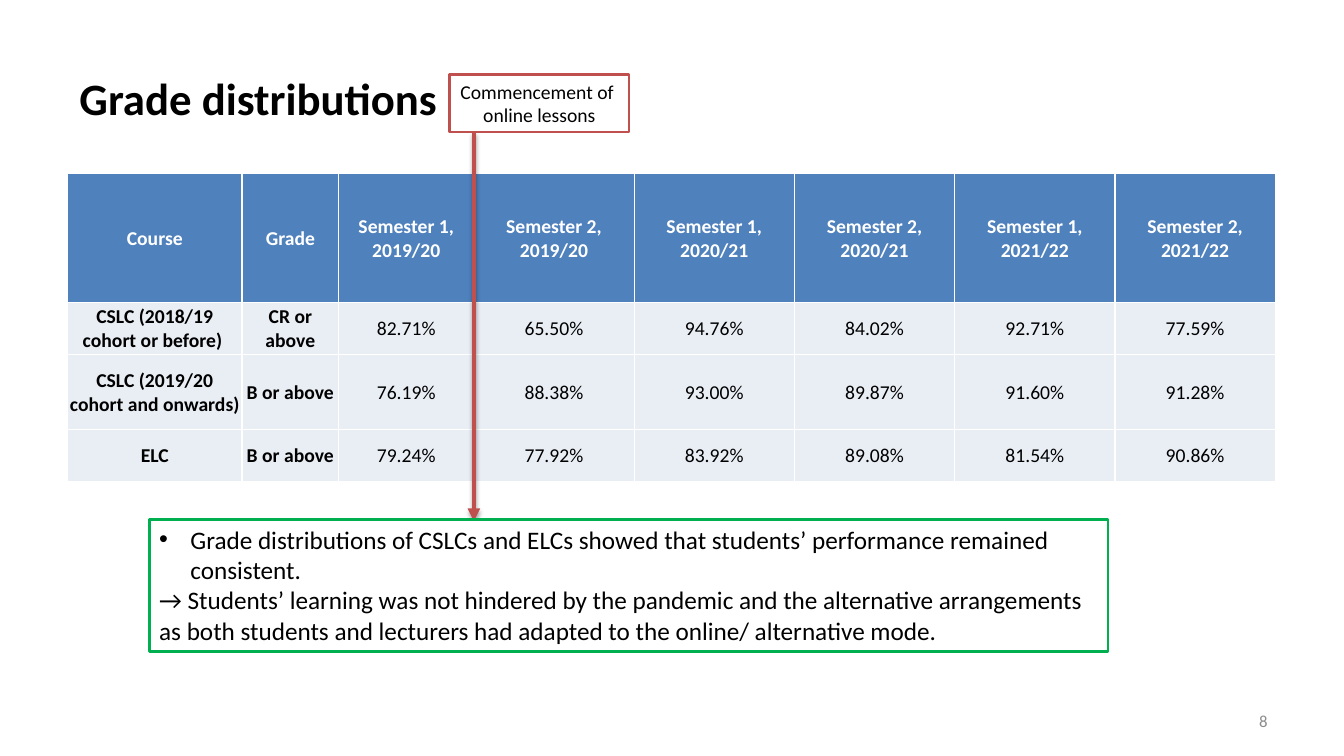
from lxml import etree
from pptx import Presentation
from pptx.dml.color import RGBColor
from pptx.enum.shapes import MSO_CONNECTOR, MSO_SHAPE
from pptx.enum.text import MSO_ANCHOR, MSO_AUTO_SIZE, PP_ALIGN
from pptx.oxml.ns import qn
from pptx.util import Inches, Pt

TOP, MIDDLE = MSO_ANCHOR.TOP, MSO_ANCHOR.MIDDLE
LEFT, CENTER, RIGHT = PP_ALIGN.LEFT, PP_ALIGN.CENTER, PP_ALIGN.RIGHT
GROW, RECTANGLE, STRAIGHT = MSO_AUTO_SIZE.SHAPE_TO_FIT_TEXT, MSO_SHAPE.RECTANGLE, MSO_CONNECTOR.STRAIGHT

COLORS = {
    "text": "000000",
    "white": "FFFFFF",
    "page": "8C8C8C",
    "header": "4F81BD",
    "band": "E9EDF4",
    "event": "C0504D",
    "finding": "00B050",
}
COLUMN_WIDTHS = [1.73, 0.96, 1.34] + [1.59] * 5
ROW_HEIGHTS = [1.28, 0.52, 0.74, 0.52]
SEMESTERS = [f"Semester {term}, {year}" for year in ("2019/20", "2020/21", "2021/22") for term in (1, 2)]
GRADES = [
    ["Course", "Grade", *SEMESTERS],
    ["CSLC (2018/19 cohort or before) ", "CR or above",
     "82.71%", "65.50%", "94.76%", "84.02%", "92.71%", "77.59%"],
    ["CSLC (2019/20 cohort and onwards) ", "B or above",
     "76.19%", "88.38%", "93.00%", "89.87%", "91.60%", "91.28%"],
    ["ELC", "B or above",
     "79.24%", "77.92%", "83.92%", "89.08%", "81.54%", "90.86%"],
]
FINDINGS = [
    "Grade distributions of CSLCs and ELCs showed that students’ performance remained consistent.",
    "→ Students’ learning was not hindered by the pandemic and the alternative arrangements "
    "as both students and lecturers had adapted to the online/ alternative mode.",
]


def rgb(name):
    """Return the named colour."""
    return RGBColor.from_string(COLORS[name])


def apply_format(target, values):
    """Set each attribute of the target from a dict of values."""
    for attribute, value in values.items():
        setattr(target, attribute, value)


def add_xml(parent, tag, **attributes):
    """Append a DrawingML element with the given attributes."""
    return etree.SubElement(parent, qn(f"a:{tag}"), {key: str(value) for key, value in attributes.items()})


def write(frame, lines, size, color="text", bold=False, align=LEFT):
    """Fill a text frame with one paragraph per line."""
    for index, line in enumerate(lines):
        paragraph = frame.paragraphs[0] if index == 0 else frame.add_paragraph()
        paragraph.alignment = align
        run = paragraph.add_run()
        run.text = line
        apply_format(run.font, {"name": "Calibri", "size": Pt(size), "bold": bold})
        run.font.color.rgb = rgb(color)


def add_label(slide, box, text, **style):
    """Place a line of vertically centred text in the box."""
    frame = slide.shapes.add_textbox(*map(Inches, box)).text_frame
    apply_format(frame, {"word_wrap": True, "vertical_anchor": MIDDLE})
    write(frame, [text], **style)


def add_callout(slide, box, lines, outline, wrap, **style):
    """Place an outlined white box of text and return its text frame."""
    callout = slide.shapes.add_shape(RECTANGLE, *map(Inches, box))
    callout.shadow.inherit = False
    callout.fill.solid()
    callout.fill.fore_color.rgb = rgb("white")
    callout.line.color.rgb = rgb(outline)
    callout.line.width = Pt(2)
    frame = callout.text_frame
    apply_format(frame, {"word_wrap": wrap, "auto_size": GROW, "vertical_anchor": TOP})
    write(frame, lines, **style)
    return frame


def add_findings(slide, box):
    """Place the findings with a bullet on the first one."""
    frame = add_callout(slide, box, FINDINGS, "finding", True, size=18)
    properties = frame.paragraphs[0]._p.get_or_add_pPr()
    indent = Inches(0.31)
    properties.set("marL", str(indent))
    properties.set("indent", str(-indent))
    add_xml(properties, "buFont", typeface="Arial")
    add_xml(properties, "buChar", char="•")


def add_borders(cell):
    """Draw thin white lines on all sides of a cell."""
    properties = cell._tc.get_or_add_tcPr()
    for side in ("lnL", "lnR", "lnT", "lnB"):
        border = add_xml(properties, side, w=Pt(1))
        add_xml(add_xml(border, "solidFill"), "srgbClr", val=COLORS["white"])


def add_grades(slide, left, top):
    """Place the table of grades by course and semester."""
    size = (sum(COLUMN_WIDTHS), sum(ROW_HEIGHTS))
    table = slide.shapes.add_table(len(ROW_HEIGHTS), len(COLUMN_WIDTHS),
                                   *map(Inches, (left, top, *size))).table
    for column, width in zip(table.columns, COLUMN_WIDTHS):
        column.width = Inches(width)
    for row_index, (row, height) in enumerate(zip(table.rows, ROW_HEIGHTS)):
        row.height = Inches(height)
        is_header = row_index == 0
        for column_index, cell in enumerate(row.cells):
            inset = Inches(0.01)
            apply_format(cell, {"margin_left": inset, "margin_right": inset, "margin_top": inset,
                                "margin_bottom": 0, "vertical_anchor": MIDDLE})
            add_borders(cell)
            cell.fill.solid()
            cell.fill.fore_color.rgb = rgb("header" if is_header else "band")
            write(cell.text_frame, [GRADES[row_index][column_index]], 14,
                  "white" if is_header else "text", is_header or column_index < 2, CENTER)


def add_event_arrow(slide, x, top, bottom):
    """Draw the downward arrow that marks the start of online lessons."""
    arrow = slide.shapes.add_connector(STRAIGHT, *map(Inches, (x, top, x, bottom)))
    arrow.line.color.rgb = rgb("event")
    arrow.line.width = Pt(3)
    add_xml(arrow.line._get_or_add_ln(), "tailEnd", type="triangle")
    effects = add_xml(arrow._element.spPr, "effectLst")
    shadow = add_xml(effects, "outerShdw", blurRad=Pt(3.1), dist=Pt(1.8), dir=90 * 60000, rotWithShape=0)
    add_xml(add_xml(shadow, "srgbClr", val=COLORS["text"]), "alpha", val=35000)


def build_slide(presentation):
    """Add the grade distributions slide."""
    slide = presentation.slides.add_slide(presentation.slide_layouts[6])
    add_label(slide, (0.69, 0.34, 12, 1.25), "Grade distributions", size=32, bold=True)
    add_label(slide, (9.56, 6.95, 3.11, 0.4), "8", size=12, color="page", align=RIGHT)
    add_grades(slide, 0.67, 1.72)
    add_event_arrow(slide, 4.7, 1.31, 5.17)
    add_callout(slide, (4.46, 0.74, 1.78, 0.57), ["Commencement of ", "online lessons"],
                "event", False, size=14, align=CENTER)
    add_findings(slide, (1.48, 5.15, 9.51, 1.31))


def main():
    """Build and save the presentation."""
    presentation = Presentation()
    apply_format(presentation, {"slide_width": Inches(13.33), "slide_height": Inches(7.5)})
    build_slide(presentation)
    presentation.save("out.pptx")


if __name__ == "__main__":
    main()
